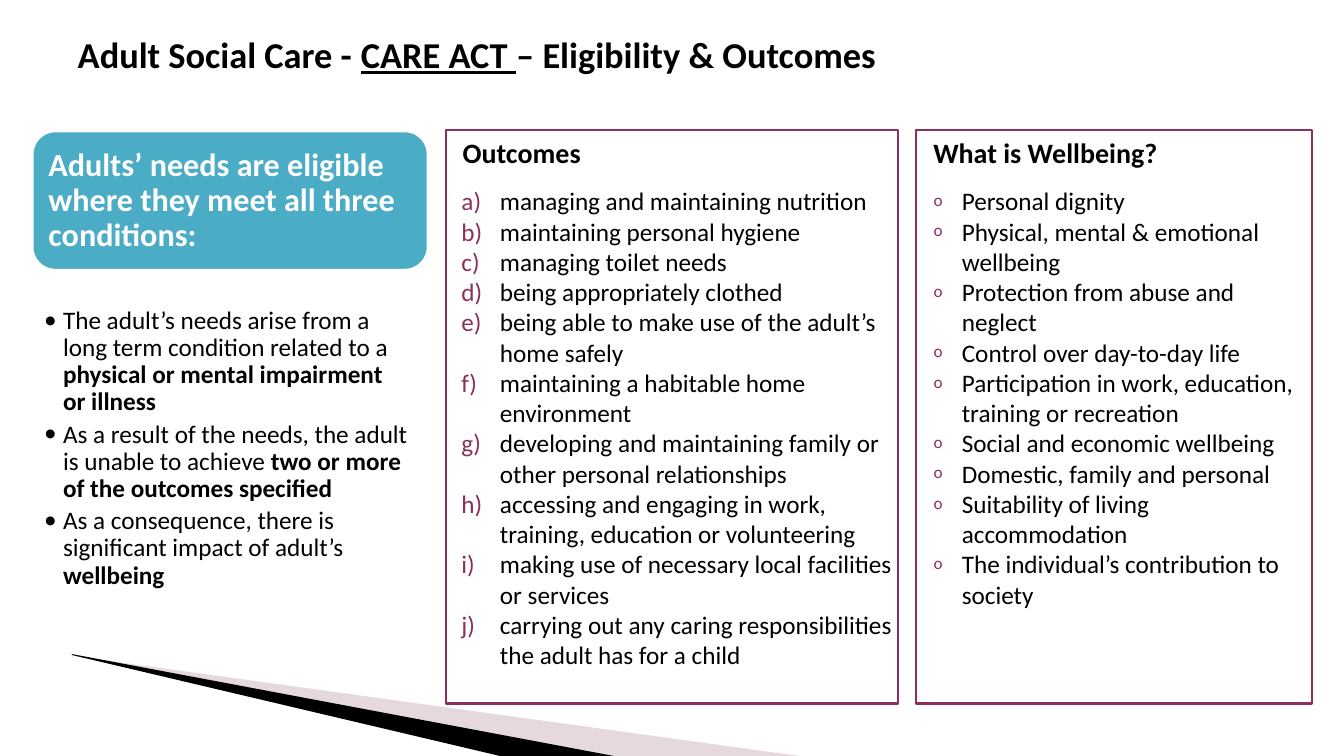
from dataclasses import dataclass
from typing import Any

import pptx
import pptx.dml.color
import pptx.enum.shapes
import pptx.enum.text
import pptx.oxml.ns
import pptx.util
from lxml import etree

Cm = pptx.util.Cm
Pt = pptx.util.Pt
SHAPES = pptx.enum.shapes.MSO_SHAPE
ANCHOR = pptx.enum.text.MSO_ANCHOR

BLACK, WHITE, PLUM, TEAL, MAUVE = "000000", "FFFFFF", "8D2F5E", "4BACC6", "C1A1AD"


@dataclass
class Box:
    left: float
    top: float
    width: float
    height: float

    def lengths(self) -> list[Any]:
        return [Cm(value) for value in (self.left, self.top, self.width, self.height)]


@dataclass
class Run:
    text: str
    size: float = 18
    bold: bool = False
    underline: bool = False
    color: str = BLACK


@dataclass
class Bullet:
    tag: str
    attributes: dict[str, str]
    color: str = BLACK
    percent: int = 100


@dataclass
class Line:
    runs: list[Run]
    margin: float = 0
    indent: float = 0
    bullet: Bullet | None = None
    spacing: float = 1.0
    after: float = 0


@dataclass
class Panel:
    box: Box
    heading: str
    items: list[str]
    bullet: Bullet
    margin: float
    indent: float


@dataclass
class Wedge:
    points: list[tuple[float, float]]
    color: str
    opacity: int = 100


LETTERS = Bullet("buAutoNum", {"type": "alphaLcParenR"}, PLUM)
CIRCLES = Bullet("buChar", {"char": "o"}, PLUM, 68)
DOTS = Bullet("buChar", {"char": "•"})

WEDGES = [
    Wedge([(1.85, 16.53), (20.14, 19.05), (15.44, 19.05), (1.85, 16.51)], MAUVE, 40),
    Wedge([(1.8, 16.48), (15.47, 19.05), (12.6, 19.05), (1.83, 16.51)], BLACK),
]

PANELS = [
    Panel(Box(23.09, 3.28, 9.98, 14.45), "What is Wellbeing?", [
        "Personal dignity",
        "Physical, mental & emotional wellbeing",
        "Protection from abuse and neglect",
        "Control over day-to-day life",
        "Participation in work, education, training or recreation",
        "Social and economic wellbeing",
        "Domestic, family and personal",
        "Suitability of living accommodation",
        "The individual’s contribution to society",
    ], CIRCLES, 1.02, -0.71),
    Panel(Box(11.23, 3.28, 11.4, 14.45), "Outcomes", [
        "managing and maintaining nutrition",
        "maintaining personal hygiene",
        "managing toilet needs",
        "being appropriately clothed",
        "being able to make use of the adult’s home safely",
        "maintaining a habitable home environment",
        "developing and maintaining family or other personal relationships",
        "accessing and engaging in work, training, education or volunteering",
        "making use of necessary local facilities or services",
        "carrying out any caring responsibilities the adult has for a child",
    ], LETTERS, 1.24, -0.97),
]

CONDITIONS = [
    ("The adult’s needs arise from a long term condition related to a ",
     "physical or mental impairment or illness"),
    ("As a result of the needs, the adult is unable to achieve ",
     "two or more of the outcomes specified"),
    ("As a consequence, there is significant impact of adult’s ", "wellbeing"),
]


def rgb(color: str) -> Any:
    return pptx.dml.color.RGBColor.from_string(color)


def paint(shape: Any, fill: str | None, line: str | None = None, width: float = 1) -> None:
    shape.shadow.inherit = False
    if fill:
        shape.fill.solid()
        shape.fill.fore_color.rgb = rgb(fill)
    else:
        shape.fill.background()
    if line:
        shape.line.color.rgb = rgb(line)
        shape.line.width = Pt(width)
    else:
        shape.line.fill.background()


def add_element(parent: Any, tag: str, **attributes: str) -> Any:
    return etree.SubElement(parent, pptx.oxml.ns.qn(f"a:{tag}"), attributes)


def format_line(paragraph: Any, line: Line) -> None:
    properties = paragraph._p.get_or_add_pPr()
    properties.set("marL", str(Cm(line.margin)))
    properties.set("indent", str(Cm(line.indent)))
    if line.bullet:
        add_element(add_element(properties, "buClr"), "srgbClr", val=line.bullet.color)
        add_element(properties, "buSzPct", val=str(line.bullet.percent * 1000))
        add_element(properties, "buFont", typeface="Calibri")
        add_element(properties, line.bullet.tag, **line.bullet.attributes)
    formats = {"alignment": pptx.enum.text.PP_ALIGN.LEFT, "line_spacing": line.spacing,
               "space_before": Pt(0), "space_after": Pt(line.after)}
    for name, value in formats.items():
        setattr(paragraph, name, value)


def write(shape: Any, lines: list[Line], insets: tuple[float, float, float, float],
          anchor: Any = ANCHOR.TOP) -> None:
    frame = shape.text_frame
    left, top, right, bottom = (Cm(inset) for inset in insets)
    formats = {"word_wrap": True, "vertical_anchor": anchor, "margin_left": left,
               "margin_top": top, "margin_right": right, "margin_bottom": bottom}
    for name, value in formats.items():
        setattr(frame, name, value)
    for index, line in enumerate(lines):
        paragraph = frame.add_paragraph() if index else frame.paragraphs[0]
        format_line(paragraph, line)
        for part in line.runs:
            run = paragraph.add_run()
            run.text = part.text
            font = {"name": "Calibri", "size": Pt(part.size), "bold": part.bold,
                    "underline": part.underline}
            for name, value in font.items():
                setattr(run.font, name, value)
            run.font.color.rgb = rgb(part.color)


def draw_wedge(slide: Any, wedge: Wedge) -> None:
    points = [(Cm(x), Cm(y)) for x, y in wedge.points]
    builder = slide.shapes.build_freeform(*points[0])
    builder.add_line_segments(points[1:], close=True)
    shape = builder.convert_to_shape()
    paint(shape, wedge.color)
    if wedge.opacity < 100:
        color = shape._element.spPr.find(".//" + pptx.oxml.ns.qn("a:srgbClr"))
        add_element(color, "alpha", val=str(wedge.opacity * 1000))


def draw_panel(slide: Any, panel: Panel) -> None:
    shape = slide.shapes.add_shape(SHAPES.RECTANGLE, *panel.box.lengths())
    paint(shape, None, PLUM, 1.5)
    heading = Line([Run(panel.heading, 20, True)], margin=0.3, after=12)
    items = [Line([Run(item)], panel.margin, panel.indent, panel.bullet)
             for item in panel.items]
    write(shape, [heading, *items], (0.13, 0.13, 0.1, 0.13))


def main() -> None:
    presentation = pptx.Presentation()
    presentation.slide_width, presentation.slide_height = Cm(33.87), Cm(19.05)
    slide = presentation.slides.add_slide(presentation.slide_layouts[6])

    # Corner decoration
    for wedge in WEDGES:
        draw_wedge(slide, wedge)

    # Title
    title = slide.shapes.add_textbox(*Box(1.83, 0.53, 25.91, 1.68).lengths())
    write(title, [Line([Run("Adult Social Care - ", 26, True),
                        Run("CARE ACT ", 26, True, True),
                        Run("– Eligibility & Outcomes", 26, True)])],
          (0.13,) * 4, ANCHOR.MIDDLE)

    # Outlined panels
    for panel in PANELS:
        draw_panel(slide, panel)

    # Eligibility banner
    banner = slide.shapes.add_shape(SHAPES.ROUNDED_RECTANGLE,
                                    *Box(0.81, 3.3, 9.98, 3.51).lengths())
    paint(banner, TEAL, WHITE, 2)
    caption = slide.shapes.add_textbox(*Box(0.97, 3.48, 9.63, 3.18).lengths())
    statement = "Adults’ needs are eligible where they meet all three conditions:"
    write(caption, [Line([Run(statement, 23, True, color=WHITE)], spacing=0.9)],
          (0.25,) * 4, ANCHOR.MIDDLE)

    # Eligibility conditions
    conditions = slide.shapes.add_textbox(*Box(0.81, 7.67, 9.98, 7.47).lengths())
    write(conditions, [Line([Run(plain), Run(strong, bold=True)], 0.48, -0.48, DOTS, 0.9, 3.5)
                       for plain, strong in CONDITIONS], (0.3, 0.08, 0.46, 0.08))

    presentation.save("out.pptx")


if __name__ == "__main__":
    main()
